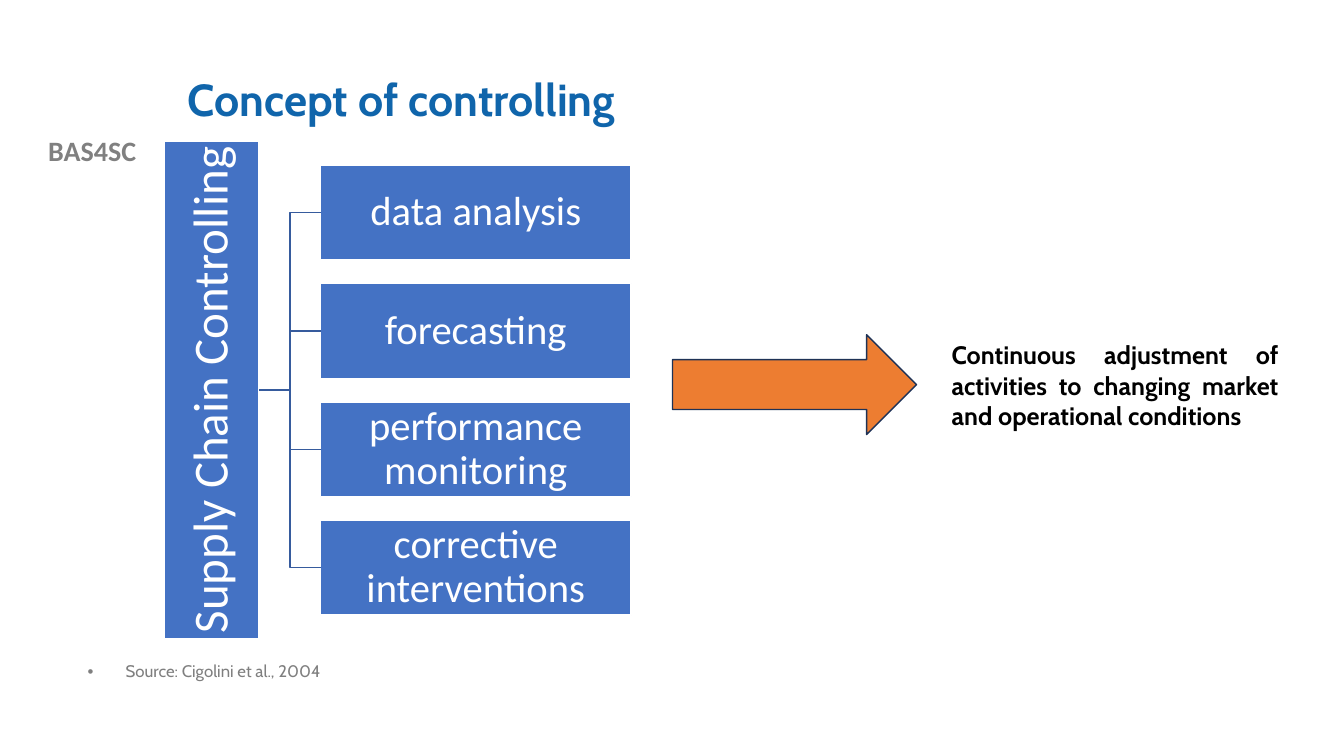
from dataclasses import dataclass

from lxml.etree import SubElement
from pptx import Presentation
from pptx.dml.color import RGBColor
from pptx.enum.shapes import MSO_CONNECTOR, MSO_SHAPE
from pptx.enum.text import MSO_ANCHOR, MSO_AUTO_SIZE, PP_ALIGN
from pptx.oxml.ns import qn
from pptx.util import Inches, Pt


@dataclass(frozen=True)
class Theme:
    heading_font: str = "Cabin"
    diagram_font: str = "Calibri"
    title_color: str = "1065AB"
    label_color: str = "808080"
    source_color: str = "7F7F7F"
    box_color: str = "4472C4"
    branch_color: str = "365B9D"
    arrow_color: str = "ED7D31"
    arrow_edge: str = "1E3256"
    white: str = "FFFFFF"
    black: str = "000000"
    title_size: int = 32
    label_size: int = 20
    source_size: int = 12
    root_size: int = 35
    box_size: int = 29
    outcome_size: int = 18


THEME = Theme()
ACTIVITIES = ["data analysis", "forecasting", "performance monitoring",
              "corrective interventions"]


def place(shape, box):
    shape.left, shape.top, shape.width, shape.height = map(Inches, box)


def write(shape, text, font, size, color, align, bold=False, spacing=1.0):
    """Fill a shape with one formatted paragraph."""
    frame = shape.text_frame
    frame.word_wrap = True
    frame.auto_size = MSO_AUTO_SIZE.NONE
    frame.text = text
    paragraph = frame.paragraphs[0]
    paragraph.alignment = align
    paragraph.line_spacing = spacing
    paragraph.space_before = Pt(0)
    run_font = paragraph.runs[0].font
    run_font.name, run_font.size, run_font.bold = font, Pt(size), bold
    run_font.color.rgb = RGBColor.from_string(color)


def add_filled(slide, kind, box, fill, edge):
    shape = slide.shapes.add_shape(kind, *map(Inches, box))
    shape.shadow.inherit = False
    shape.fill.solid()
    shape.fill.fore_color.rgb = RGBColor.from_string(fill)
    shape.line.color.rgb = RGBColor.from_string(edge)
    shape.line.width = Pt(1)
    return shape


def add_node(slide, box, text, size):
    node = add_filled(slide, MSO_SHAPE.RECTANGLE, box, THEME.box_color, THEME.white)
    write(node, text, THEME.diagram_font, size, THEME.white, PP_ALIGN.CENTER,
          spacing=0.9)
    frame = node.text_frame
    frame.vertical_anchor = MSO_ANCHOR.MIDDLE
    frame.margin_left = frame.margin_right = Inches(0.02)
    frame.margin_top = frame.margin_bottom = Inches(0.02)
    return node


def add_label(slide, box, text, font, size, color, align):
    label = slide.shapes.add_textbox(*map(Inches, box))
    write(label, text, font, size, color, align, bold=True)


def add_branch(slide, root, node):
    branch = slide.shapes.add_connector(MSO_CONNECTOR.ELBOW, 0, 0, 0, 0)
    branch.begin_connect(root, 3)
    branch.end_connect(node, 1)
    branch.line.color.rgb = RGBColor.from_string(THEME.branch_color)
    branch.line.width = Pt(1)
    SubElement(branch._element.spPr, qn("a:effectLst"))


def add_heading(slide, box):
    title = slide.shapes.title
    place(title, box)
    write(title, "Concept of controlling", THEME.heading_font, THEME.title_size,
          THEME.title_color, PP_ALIGN.LEFT, bold=True, spacing=0.9)
    title.text_frame.vertical_anchor = MSO_ANCHOR.MIDDLE


def add_source(slide, box):
    source = slide.placeholders[1]
    place(source, box)
    properties = source.text_frame.paragraphs[0]._p.get_or_add_pPr()
    properties.set("marL", "0")
    properties.set("indent", "0")
    SubElement(properties, qn("a:buNone"))
    write(source, "Source: Cigolini et al., 2004", THEME.heading_font,
          THEME.source_size, THEME.source_color, PP_ALIGN.LEFT, spacing=0.9)


def add_hierarchy(slide, box):
    """Upright root bar on the left, evenly spaced activities on the right."""
    left, top, width, height = box
    thickness = 0.94
    pitch = 1.25 * thickness
    node_width = 3.08
    root = add_node(slide, (left, top, thickness, height),
                    "Supply Chain Controlling", THEME.root_size)
    root.text_frame._txBody.bodyPr.set("vert", "vert270")

    stack_height = pitch * (len(ACTIVITIES) - 1) + thickness
    first_top = top + (height - stack_height) / 2
    for row, activity in enumerate(ACTIVITIES):
        node_box = (left + width - node_width, first_top + row * pitch,
                    node_width, thickness)
        node = add_node(slide, node_box, activity, THEME.box_size)
        add_branch(slide, root, node)


def add_outcome(slide, box):
    """Arrow followed by the result it leads to."""
    left, top, width, height = box
    arrow_width, text_width = 2.42, 3.44
    add_filled(slide, MSO_SHAPE.RIGHT_ARROW, (left, top, arrow_width, 0.99),
               THEME.arrow_color, THEME.arrow_edge)
    add_label(slide, (left + width - text_width, top, text_width, height),
              "Continuous adjustment of activities to changing market "
              "and operational conditions",
              THEME.heading_font, THEME.outcome_size, THEME.black, PP_ALIGN.JUSTIFY)


def main():
    deck = Presentation()
    deck.slide_width, deck.slide_height = Inches(13.33), Inches(7.5)
    slide = deck.slides.add_slide(deck.slide_layouts[1])

    add_label(slide, (0, 1.28, 1.83, 0.44), "BAS4SC", THEME.diagram_font,
              THEME.label_size, THEME.label_color, PP_ALIGN.CENTER)
    add_heading(slide, (1.76, 0.4, 10.66, 1.22))
    add_source(slide, (0.77, 6.53, 5.01, 0.52))
    add_hierarchy(slide, (1.63, 1.4, 4.63, 4.94))
    add_outcome(slide, (6.67, 3.32, 6.11, 1.31))

    deck.save("out.pptx")


if __name__ == "__main__":
    main()
